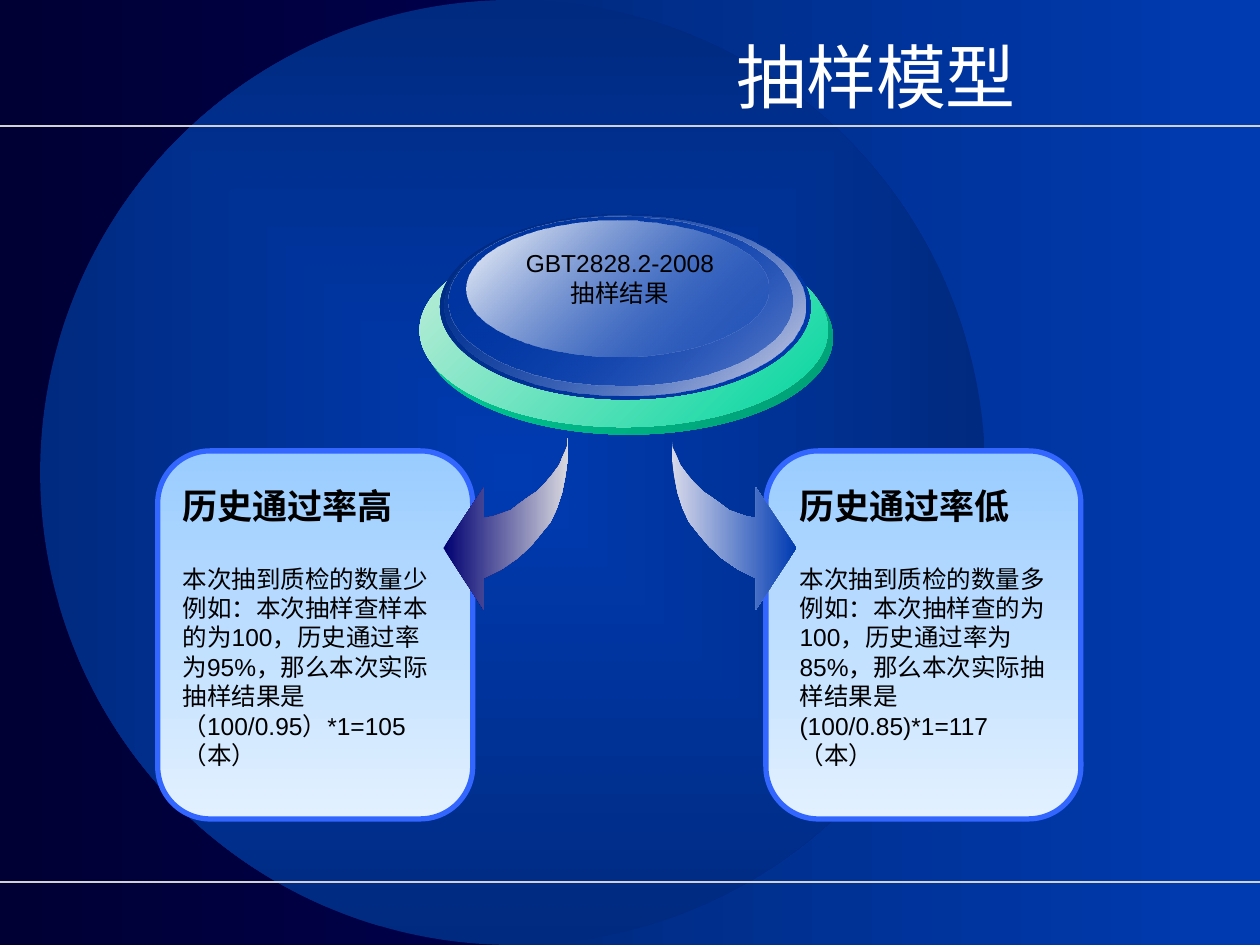
from lxml.etree import SubElement
from pptx import Presentation
from pptx.dml.color import RGBColor
from pptx.enum.shapes import MSO_CONNECTOR, MSO_SHAPE
from pptx.enum.text import MSO_ANCHOR, PP_ALIGN
from pptx.oxml.ns import qn
from pptx.util import Cm, Pt

HUES = {
    "night": "000035", "navy": "000072", "deep": "002A7F", "royal": "003BB2",
    "cobalt": "0035A1", "rule": "D1D1D1", "white": "FFFFFF", "black": "000000",
    "sky": "99CCFF", "pale": "E3F1FF", "edge": "3366FF", "green": "00D69E",
    "moss": "009C73", "mint": "C6EEDB", "mist": "D8D8DF", "haze": "D8D9EA",
    "lilac": "D4D5E8",
}
WIDE, HIGH = 25.4, 19.05

# Outline of an arrow that sweeps down to the left, in cm
SWEEP = [
    (2.51, 0), (2.51, 0.38), (2.46, 0.74), (2.39, 1.09), (2.29, 1.4),
    (2.16, 1.68), (1.96, 1.93), (1.75, 2.18), (1.5, 2.41), (1.17, 2.64),
    (0.81, 2.82), (0.81, 3.45), (0, 2.21), (0.81, 0.99), (0.81, 1.6),
    (0.99, 1.57), (1.14, 1.52), (1.35, 1.45), (1.52, 1.32), (1.7, 1.19),
    (1.88, 1.07), (2.06, 0.89), (2.21, 0.71), (2.34, 0.53), (2.41, 0.36),
    (2.49, 0.18),
]
SWEEP_WIDE = 2.51

# Ellipses of the disc: box in cm, then first and last (hue, opacity %)
RINGS = [
    ((0.1, 0.53, 8.23, 3.91), ("green", 100), ("moss", 100)),
    ((0, 0.38, 8.23, 3.91), ("mint", 100), ("green", 100)),
    ((0.41, 0, 7.47, 3.73), ("deep", 100), ("royal", 100)),
    ((0.51, 0.03, 7.26, 3.63), ("royal", 0), ("lilac", 100)),
    ((0.58, 0.05, 6.93, 3.4), ("cobalt", 100), ("royal", 48)),
    ((0.94, 0.13, 6.1, 2.74), ("white", 100), ("royal", 38)),
]


def rgb(hue):
    return RGBColor.from_string(HUES[hue])


def blend(fill, root, first, last, angle=0, center=False):
    """Give fill a two-stop gradient; root is the XML element that holds it."""
    fill.solid()
    solid = root.find(qn("a:solidFill"))
    grad = SubElement(root, qn("a:gradFill"), rotWithShape="1")
    root.replace(solid, grad)
    stops = SubElement(grad, qn("a:gsLst"))
    for pos, (hue, alpha) in ((0, first), (100000, last)):
        stop = SubElement(stops, qn("a:gs"), pos=str(pos))
        color = SubElement(stop, qn("a:srgbClr"), val=HUES[hue])
        if alpha < 100:
            SubElement(color, qn("a:alpha"), val=str(alpha * 1000))
    if center:
        way = SubElement(grad, qn("a:path"), path="shape")
        SubElement(way, qn("a:fillToRect"), l="50000", t="50000",
                   r="50000", b="50000")
    else:
        SubElement(grad, qn("a:lin"), ang=str(angle * 60000), scaled="0")


def tint(shape, first, last, **kind):
    shape.shadow.inherit = False
    shape.line.fill.background()
    blend(shape.fill, shape.element.spPr, first, last, **kind)


def add_form(shapes, form, box, first, last, **kind):
    shape = shapes.add_shape(form, *map(Cm, box))
    tint(shape, first, last, **kind)
    return shape


def add_text(shapes, box, lines, size=14, hue="black", align=PP_ALIGN.LEFT,
             anchor=MSO_ANCHOR.TOP, wrap=True, head=None, gap=0):
    """Place lines; head is the size of a bold first line with gap below it."""
    frame = shapes.add_textbox(*map(Cm, box)).text_frame
    frame.word_wrap = wrap
    frame.vertical_anchor = anchor
    for i, line in enumerate(lines):
        para = frame.paragraphs[0] if i == 0 else frame.add_paragraph()
        para.alignment = align
        if i == 1 and gap:
            para.space_before = Pt(gap)
        run = para.add_run()
        run.text = line
        bold = bool(head) and i == 0
        run.font.name = "Arial"
        run.font.size = Pt(head if bold else size)
        run.font.bold = bold
        run.font.color.rgb = rgb(hue)


def add_rule(shapes, y):
    rule = shapes.add_connector(MSO_CONNECTOR.STRAIGHT, 0, Cm(y), Cm(WIDE), Cm(y))
    rule.line.color.rgb = rgb("rule")
    rule.line.width = Pt(1)
    SubElement(rule.element.spPr, qn("a:effectLst"))


def add_scene(slide):
    """Backdrop, large circle and the two rules."""
    back = slide.background.fill
    back.solid()
    blend(back, slide.element.find(".//" + qn("p:bgPr")),
          ("night", 100), ("navy", 100))
    left = 10.36
    add_form(slide.shapes, MSO_SHAPE.RECTANGLE, (left, 0, WIDE - left, HIGH),
             ("deep", 100), ("royal", 100))
    add_form(slide.shapes, MSO_SHAPE.OVAL, (0.81, 0, HIGH, HIGH),
             ("royal", 100), ("deep", 100), center=True)
    for y in (2.54, 17.78):
        add_rule(slide.shapes, y)


def add_card(shapes, x, y, inset, lines):
    card = add_form(shapes, MSO_SHAPE.ROUNDED_RECTANGLE, (x, y, 6.35, 7.42),
                    ("sky", 100), ("pale", 100), angle=90)
    card.line.color.rgb = rgb("edge")
    card.line.width = Pt(3)
    add_text(shapes, (x + inset, y + 0.56, 5.7, 6.3), lines, head=20, gap=21)


def add_arrow(shapes, x, y, first, last, flip=False):
    spots = [(Cm(x + (SWEEP_WIDE - px if flip else px)), Cm(y + py))
             for px, py in SWEEP]
    form = shapes.build_freeform(*spots[0])
    form.add_line_segments(spots[1:], close=True)
    tint(form.convert_to_shape(), first, last)


def add_disc(shapes, x, y, lines):
    group = shapes.add_group_shape().shapes
    for (dx, dy, w, h), first, last in RINGS:
        add_form(group, MSO_SHAPE.OVAL, (x + dx, y + dy, w, h),
                 first, last, angle=45)
    add_text(shapes, (x + 1.88, y + 0.56, 4.32, 1.45), lines,
             align=PP_ALIGN.CENTER, wrap=False)


def main():
    deck = Presentation()
    deck.slide_width, deck.slide_height = Cm(WIDE), Cm(HIGH)
    slide = deck.slides.add_slide(deck.slide_layouts[6])
    shapes = slide.shapes
    add_scene(slide)
    add_text(shapes, (0.84, 0.36, 19.89, 2.34), ["抽样模型"], size=40,
             hue="white", align=PP_ALIGN.RIGHT, anchor=MSO_ANCHOR.MIDDLE)
    add_card(shapes, 15.44, 9.09, 0.43, [
        "历史通过率低", "本次抽到质检的数量多",
        "例如：本次抽样查的为100，历史通过率为85%，"
        "那么本次实际抽样结果是(100/0.85)*1=117（本）"])
    add_card(shapes, 3.18, 9.09, 0.25, [
        "历史通过率高", "本次抽到质检的数量少",
        "例如：本次抽样查样本的为100，历史通过率为95%，"
        "那么本次实际抽样结果是（100/0.95）*1=105（本）"])
    add_arrow(shapes, 8.94, 8.84, ("navy", 100), ("mist", 100))
    add_arrow(shapes, 13.54, 8.84, ("haze", 100), ("royal", 100), flip=True)
    add_disc(shapes, 8.46, 4.32, ["GBT2828.2-2008", "抽样结果"])
    deck.save("out.pptx")


if __name__ == "__main__":
    main()
